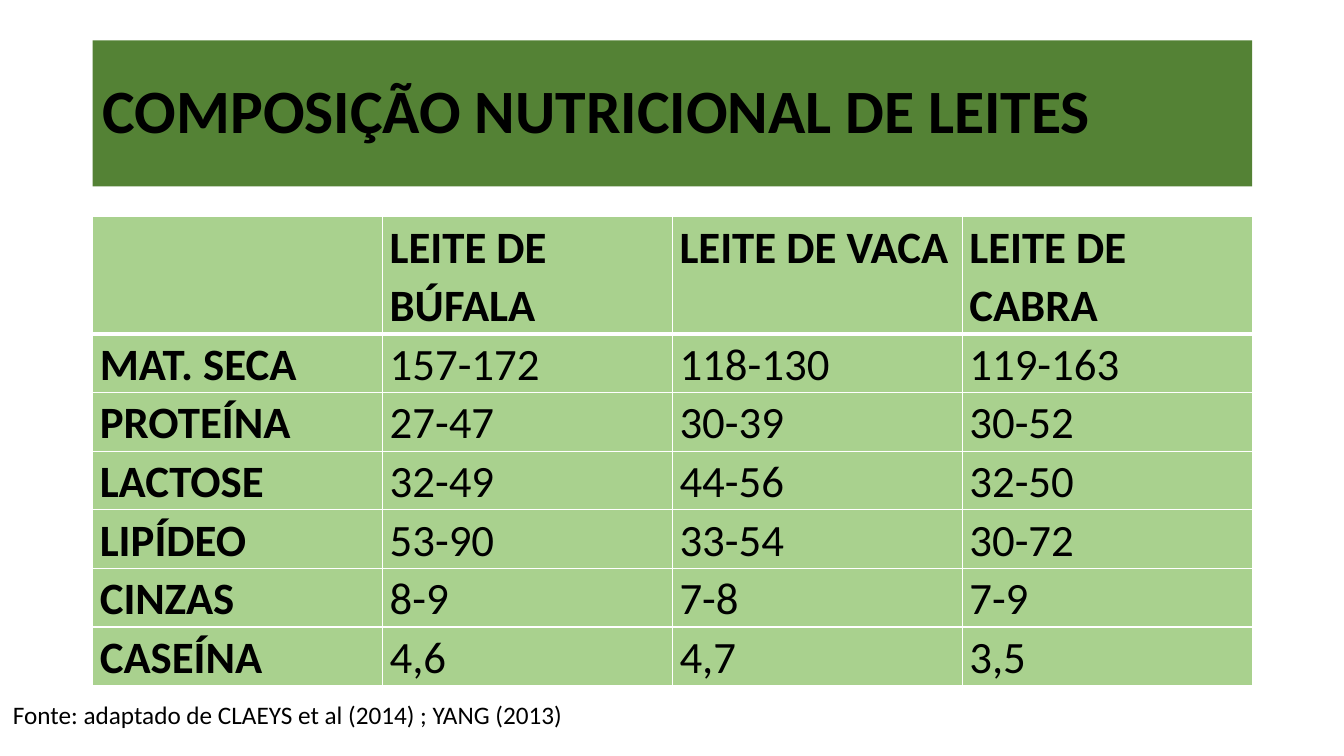
from lxml import etree
from pptx import Presentation
from pptx import util as u
from pptx.dml.color import RGBColor
from pptx.enum import shapes, text
from pptx.oxml.ns import qn

TITLE = "COMPOSIÇÃO NUTRICIONAL DE LEITES"
SOURCE = "Fonte: adaptado de CLAEYS et al (2014) ; YANG (2013)"
MILKS = [
    ("", "LEITE DE BÚFALA", "LEITE DE VACA", "LEITE DE CABRA"),
    ("MAT. SECA", "157-172", "118-130", "119-163"),
    ("PROTEÍNA", "27-47", "30-39", "30-52"),
    ("LACTOSE", "32-49", "44-56", "32-50"),
    ("LIPÍDEO", "53-90", "33-54", "30-72"),
    ("CINZAS", "8-9", "7-8", "7-9"),
    ("CASEÍNA", "4,6", "4,7", "3,5"),
]
FONT = "Calibri"
BLACK, WHITE, DARK_GREEN, LIGHT_GREEN = "000000", "FFFFFF", "548235", "A9D18E"
WIDTH, HEIGHT = 13.33, 7.5
MARGIN, CONTENT_WIDTH = 0.92, 11.5
TITLE_TOP, TITLE_HEIGHT = 0.4, 1.45
TABLE_TOP, TABLE_HEIGHT, ROW_HEIGHT = 2.15, 4.4, 0.52


def paint(fill, color):
    fill.solid()
    fill.fore_color.rgb = RGBColor.from_string(color)


def write(frame, words, size, bold=False, spacing=None):
    para = frame.paragraphs[0]
    para.text = words
    para.alignment = text.PP_ALIGN.LEFT
    para.line_spacing = spacing
    para.font.name = FONT
    para.font.size = u.Pt(size)
    para.font.bold = bold
    para.font.color.rgb = RGBColor.from_string(BLACK)


def add_borders(cell, bottom):
    properties = cell._tc.get_or_add_tcPr()
    for index, (side, points) in enumerate(
        [("lnL", 1), ("lnR", 1), ("lnT", 1), ("lnB", bottom)]
    ):
        line = etree.Element(qn(f"a:{side}"), w=str(u.Pt(points)))
        fill = etree.SubElement(line, qn("a:solidFill"))
        etree.SubElement(fill, qn("a:srgbClr"), val=WHITE)
        properties.insert(index, line)


def add_title(page):
    banner = page.shapes.add_shape(
        shapes.MSO_SHAPE.RECTANGLE,
        *map(u.Inches, (MARGIN, TITLE_TOP, CONTENT_WIDTH, TITLE_HEIGHT)),
    )
    banner.shadow.inherit = False
    paint(banner.fill, DARK_GREEN)
    banner.line.fill.background()
    banner.text_frame.vertical_anchor = text.MSO_ANCHOR.MIDDLE
    write(banner.text_frame, TITLE, 44, True, 0.9)


def add_milk_table(page):
    graphic = page.shapes.add_table(
        len(MILKS), len(MILKS[0]),
        *map(u.Inches, (MARGIN, TABLE_TOP, CONTENT_WIDTH, TABLE_HEIGHT)),
    )
    table = graphic.table
    for row, values in enumerate(MILKS):
        table.rows[row].height = u.Inches(ROW_HEIGHT)
        for column, value in enumerate(values):
            cell = table.cell(row, column)
            cell.margin_left = cell.margin_right = u.Inches(0.07)
            cell.margin_top = cell.margin_bottom = 0
            paint(cell.fill, LIGHT_GREEN)
            add_borders(cell, 3 if row == 0 else 1)
            if value:
                write(cell.text_frame, value, 32, row == 0 or column == 0, 1.07)
    graphic.height = u.Inches(TABLE_HEIGHT)


def add_source(page):
    box = page.shapes.add_textbox(*map(u.Inches, (0.03, 6.89, 5.72, 0.4)))
    box.text_frame.word_wrap = False
    box.text_frame.auto_size = text.MSO_AUTO_SIZE.SHAPE_TO_FIT_TEXT
    box.text_frame.vertical_anchor = text.MSO_ANCHOR.MIDDLE
    write(box.text_frame, SOURCE, 18)


def main():
    deck = Presentation()
    deck.slide_width, deck.slide_height = u.Inches(WIDTH), u.Inches(HEIGHT)
    page = deck.slides.add_slide(deck.slide_layouts[6])
    add_title(page)
    add_milk_table(page)
    add_source(page)
    deck.save("out.pptx")


if __name__ == "__main__":
    main()
